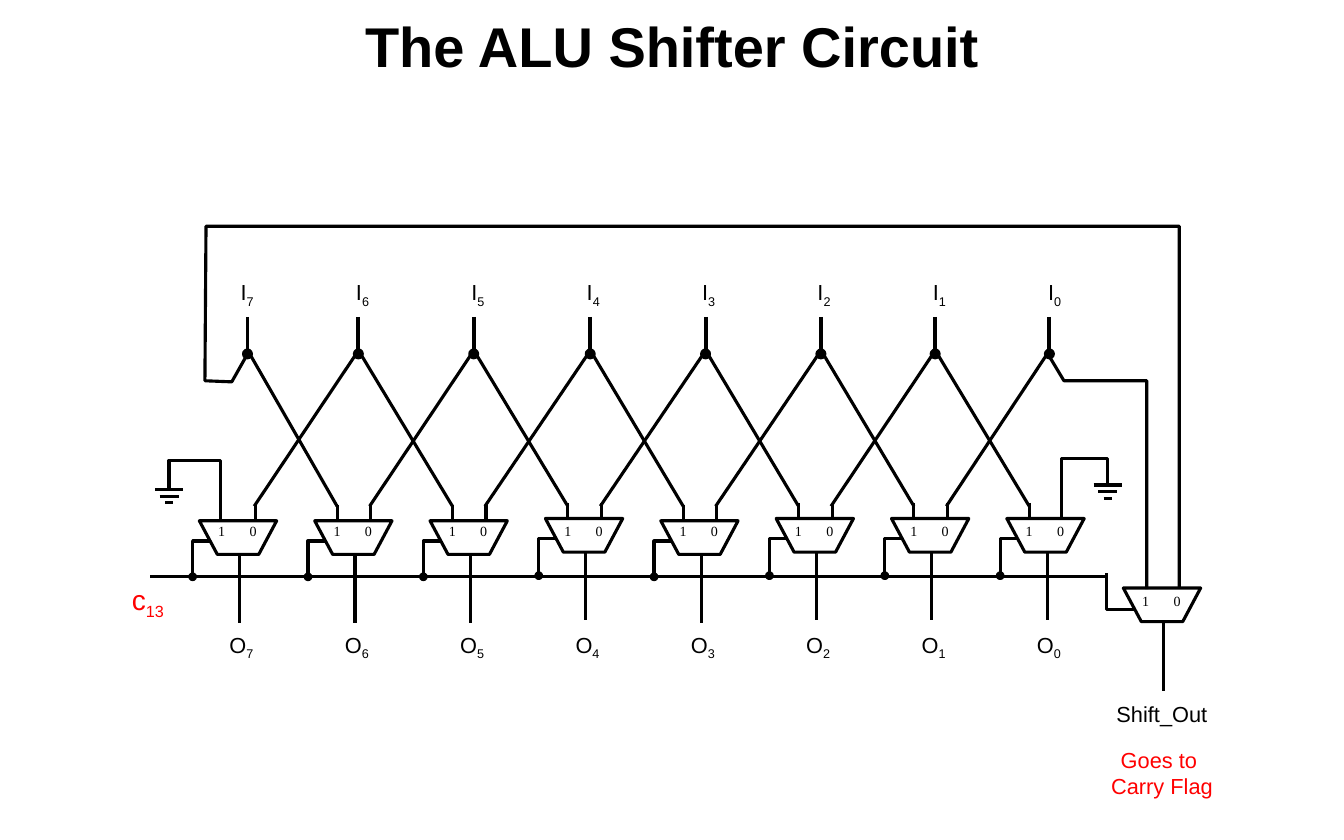
import dataclasses

import pptx
import pptx.dml.color
import pptx.enum.shapes
import pptx.enum.text
import pptx.oxml
import pptx.oxml.ns
import pptx.util
from pptx.util import Inches


@dataclasses.dataclass(frozen=True)
class Theme:
    ink: str = "000000"
    paper: str = "FFFFFF"
    accent: str = "FF0000"
    sans: str = "Arial"
    serif: str = "Times New Roman"
    title: int = 36
    control: int = 18
    label: int = 14
    pin: int = 9
    wire: float = 2
    lead: float = 2.5


THEME = Theme()
BITS = range(7, -1, -1)
INPUT_X = (2.21, 3.2, 4.23, 5.27, 6.3, 7.33, 8.35, 9.37)
MUX_LEFT, PITCH = 1.78, 1.03
RAISED_BITS = (4, 2, 1, 0)
JUNCTION_Y = 3.16
BUS_Y = 5.15


def rgb(color):
    return pptx.dml.color.RGBColor.from_string(color)


def draw_outline(line, weight=THEME.wire):
    line.color.rgb = rgb(THEME.ink)
    line.width = pptx.util.Pt(weight)


def add_wire(slide, start, end, weight=THEME.wire):
    wire = slide.shapes.add_connector(
        pptx.enum.shapes.MSO_CONNECTOR.STRAIGHT,
        *(Inches(value) for value in (*start, *end)))
    draw_outline(wire.line, weight)
    wire.element.spPr.append(
        wire.element.makeelement(pptx.oxml.ns.qn("a:effectLst"), {}))


def add_bent_wire(slide, *corners):
    points = [(Inches(x), Inches(y)) for x, y in corners]
    builder = slide.shapes.build_freeform(*points[0], scale=1.0)
    builder.add_line_segments(points[1:], close=False)
    bent_wire = builder.convert_to_shape()
    bent_wire.fill.background()
    bent_wire.shadow.inherit = False
    draw_outline(bent_wire.line)


def add_solid(slide, preset, box, fill):
    solid = slide.shapes.add_shape(preset, *(Inches(value) for value in box))
    solid.shadow.inherit = False
    solid.fill.solid()
    solid.fill.fore_color.rgb = rgb(fill)
    draw_outline(solid.line)
    return solid


def add_dot(slide, x, y, size):
    add_solid(slide, pptx.enum.shapes.MSO_SHAPE.OVAL,
              (x - size / 2, y - size / 2, size, size), THEME.ink)


def add_label(slide, box, lines, size=THEME.label, color=THEME.ink,
              font=THEME.sans, bold=False, centered=False, wrap=False):
    label = slide.shapes.add_textbox(*(Inches(value) for value in box))
    frame = label.text_frame
    frame.word_wrap = wrap
    if not centered:
        frame.margin_right = 0
    for number, (base, subscript) in enumerate(lines):
        paragraph = frame.add_paragraph() if number else frame.paragraphs[0]
        if centered:
            paragraph.alignment = pptx.enum.text.PP_ALIGN.CENTER
        for text, offset in ((base, None), (subscript, "-25000")):
            if not text:
                continue
            run = paragraph.add_run()
            run.text = text
            run.font.name = font
            run.font.size = pptx.util.Pt(size)
            run.font.bold = bold
            run.font.color.rgb = rgb(color)
            if offset:
                run.font._element.set("baseline", offset)
    return frame


def add_mux(slide, left, top, pins_top):
    mux = add_solid(slide, pptx.enum.shapes.MSO_SHAPE.TRAPEZOID,
                    (left, top, 0.69, 0.3), THEME.paper)
    mux.rotation = 180
    mux.adjustments[0] = 0.534
    pins = add_label(slide, (left + 0.07, pins_top, 0.56, 0.25),
                     [("1\t0", "")], THEME.pin, font=THEME.serif, wrap=True)
    properties = pins.paragraphs[0]._p.get_or_add_pPr()
    stops = pptx.oxml.parse_xml(
        '<a:tabLst xmlns:a="http://schemas.openxmlformats.org/drawingml/2006/main">'
        f'<a:tab pos="{Inches(0.28)}" algn="l"/></a:tabLst>')
    properties.append(stops)


def add_ground(slide, x, y, pin_x, rail_y, pin_y):
    add_bent_wire(slide, (pin_x, pin_y), (pin_x, rail_y), (x, rail_y), (x, y))
    for step, width in enumerate((0.25, 0.17, 0.07)):
        bar_y = y + 0.06 * step
        add_wire(slide, (x - width / 2, bar_y), (x + width / 2, bar_y))


def add_output_stage(slide, column, bit):
    left = MUX_LEFT + PITCH * column
    lift = 0.02 if bit in RAISED_BITS else 0
    top = 4.65 - lift
    add_mux(slide, left, top, 4.62)
    add_wire(slide, (left + 0.36, top + 0.3), (left + 0.36, 5.56 - lift))
    add_label(slide, (left + 0.17, 5.59, 0.48, 0.29), [("O", str(bit))])
    if bit != 7:
        add_wire(slide, (left + 0.2, top - 0.14), (left + 0.2, top))
        add_wire(slide, (left + 0.2, 4.52), (INPUT_X[column - 1] + 0.02, JUNCTION_Y))
    if bit != 0:
        add_wire(slide, (left + 0.5, top - 0.14), (left + 0.5, top))
        add_wire(slide, (left + 0.49, 4.52), (INPUT_X[column + 1] - 0.02, JUNCTION_Y))
    control_x = left - 0.06
    add_dot(slide, control_x, BUS_Y - lift / 2, 0.05)
    add_bent_wire(slide, (control_x, BUS_Y - lift / 2),
                  (control_x, top + 0.18), (left + 0.1, top + 0.18))


def add_input(slide, column, bit):
    x = INPUT_X[column]
    add_label(slide, (2.05 + PITCH * column, 2.44, 0.38, 0.29), [("I", str(bit))])
    add_dot(slide, x, JUNCTION_Y, 0.07)
    add_wire(slide, (x, 2.83), (x, 3.15), THEME.lead)


def add_carry_stage(slide):
    add_mux(slide, 10.03, 5.25, 5.24)
    add_wire(slide, (10.39, 5.54), (10.39, 6.17))
    add_bent_wire(slide, (9.88, 5.12), (9.88, 5.44), (10.14, 5.44))
    add_bent_wire(slide, (10.24, 5.26), (10.24, 3.4), (9.5, 3.4), (9.38, 3.2))
    add_bent_wire(slide, (10.53, 5.25), (10.53, 2.02), (1.84, 2.02),
                  (1.83, 3.4), (2.07, 3.41), (2.2, 3.18))
    add_label(slide, (9.87, 6.21, 1, 0.29), [("Shift_Out", "")])
    add_label(slide, (9.82, 6.62, 1.11, 0.57),
              [("Goes to ", ""), ("Carry Flag", "")],
              color=THEME.accent, centered=True)


def main():
    deck = pptx.Presentation()
    deck.slide_width, deck.slide_height = Inches(12), Inches(7.5)
    slide = deck.slides.add_slide(deck.slide_layouts[6])
    title = add_label(slide, (1, 0, 10, 0.75), [("The ALU Shifter Circuit", "")],
                      THEME.title, bold=True, centered=True, wrap=True)
    title.margin_top = Inches(0.1)
    add_wire(slide, (1.34, BUS_Y), (9.88, BUS_Y))
    add_label(slide, (1.08, 5.15, 0.51, 0.4), [("c", "13")],
              THEME.control, THEME.accent)
    add_ground(slide, 1.51, 4.37, 1.97, 4.11, 4.65)
    add_ground(slide, 9.89, 4.33, 9.48, 4.09, 4.64)
    for column, bit in enumerate(BITS):
        add_output_stage(slide, column, bit)
        add_input(slide, column, bit)
    add_carry_stage(slide)
    deck.save("out.pptx")


if __name__ == "__main__":
    main()
